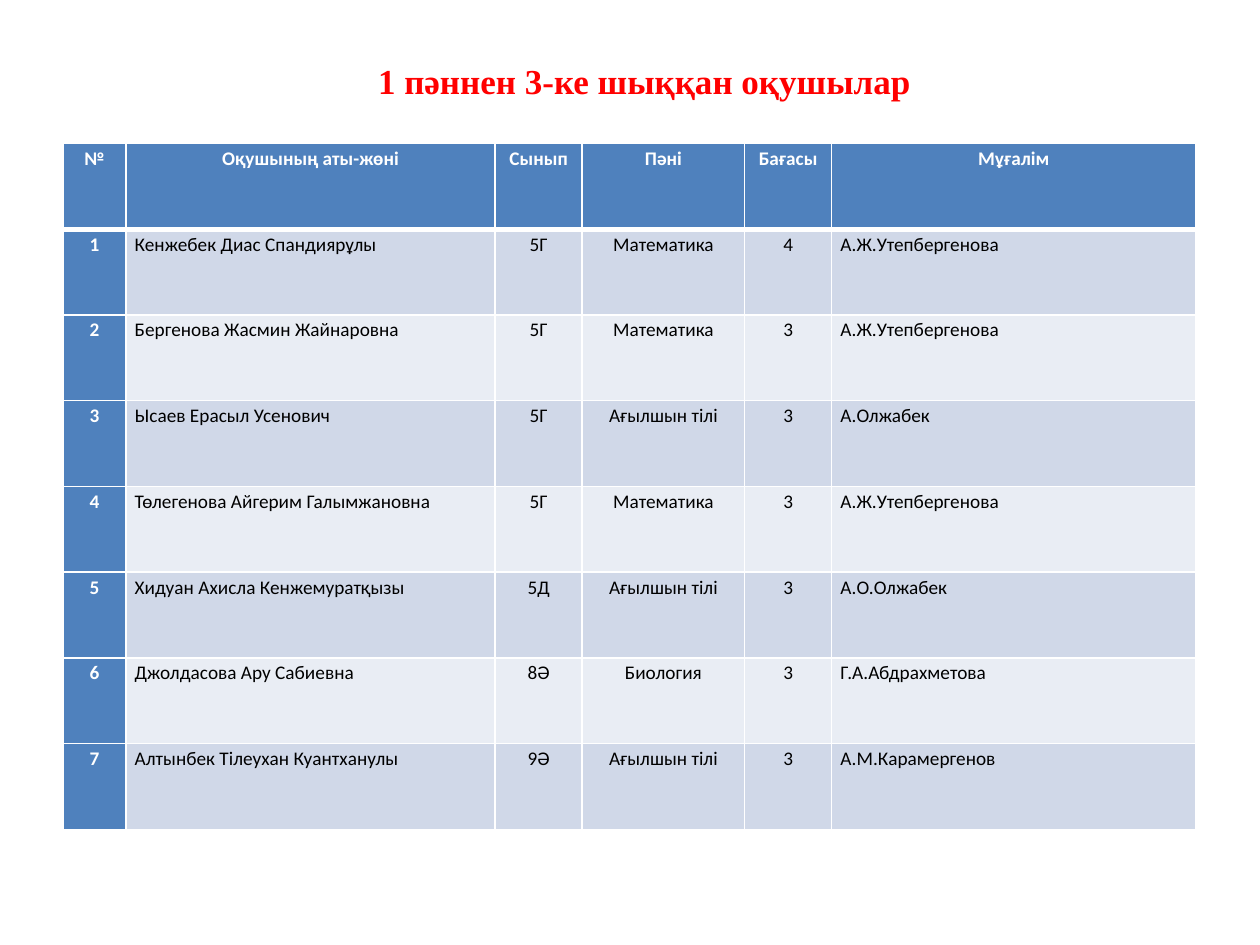
from lxml.etree import SubElement
from pptx import Presentation
from pptx.dml.color import RGBColor
from pptx.enum.shapes import MSO_SHAPE as Shape
from pptx.enum.text import MSO_ANCHOR as Anchor, PP_ALIGN as Align
from pptx.oxml.ns import qn
from pptx.util import Pt

WHITE = RGBColor(0xFF, 0xFF, 0xFF)
BLACK = RGBColor(0, 0, 0)
RED = RGBColor(0xFF, 0, 0)
BLUE = RGBColor(0x4F, 0x81, 0xBD)
BANDS = RGBColor(0xD0, 0xD8, 0xE8), RGBColor(0xE9, 0xED, 0xF4)

HEADER = ["№", "Оқушының аты-жөні", "Сынып", "Пәні", "Бағасы", "Мұғалім"]
PUPILS = [
    ["Кенжебек Диас Спандиярұлы", "5Г", "Математика", "4", "А.Ж.Утепбергенова"],
    ["Бергенова Жасмин Жайнаровна", "5Г", "Математика", "3", "А.Ж.Утепбергенова"],
    ["Ысаев Ерасыл Усенович", "5Г", "Ағылшын тілі", "3", "А.Олжабек"],
    ["Төлегенова Айгерим Галымжановна", "5Г", "Математика", "3", "А.Ж.Утепбергенова"],
    ["Хидуан Ахисла Кенжемуратқызы", "5Д", "Ағылшын тілі", "3", "А.О.Олжабек"],
    ["Джолдасова Ару Сабиевна", "8Ә", "Биология", "3", "Г.А.Абдрахметова"],
    ["Алтынбек Тілеухан Куантханулы", "9Ә", "Ағылшын тілі", "3", "А.М.Карамергенов"],
]
COL_WIDTHS = [36, 211, 49.7, 92.9, 49.7, 208.1]
ROW_HEIGHT = 49
LEFT_COLS = (1, 5)  # pupil and teacher names


def put_text(tf, text, *, font="Calibri", size=11, color=BLACK, bold=False,
             align=Align.CENTER, spacing=None):
    p = tf.paragraphs[0]
    p.alignment = align
    p.line_spacing = spacing
    r = p.add_run()
    r.text = text
    r.font.name, r.font.size, r.font.bold = font, Pt(size), bold
    r.font.color.rgb = color


class Deck:
    def __init__(self, width, height):
        self.prs = Presentation()
        self.prs.slide_width, self.prs.slide_height = Pt(width), Pt(height)
        self.s = self.prs.slides.add_slide(self.prs.slide_layouts[6])

    def title(self, text, x, y, w, h):
        sp = self.s.shapes.add_shape(Shape.RECTANGLE, Pt(x), Pt(y), Pt(w), Pt(h))
        sp.shadow.inherit = False
        sp.fill.solid()
        sp.fill.fore_color.rgb = WHITE
        sp.line.fill.background()
        tf = sp.text_frame
        tf.word_wrap = True
        tf.vertical_anchor = Anchor.MIDDLE
        tf.margin_top, tf.margin_bottom = Pt(14), Pt(3.6)
        put_text(tf, text, font="Times New Roman", size=20, color=RED, bold=True)

    def borders(self, cell, top=1, bottom=1):
        tc_pr = cell._tc.get_or_add_tcPr()
        widths = {"a:lnL": 1, "a:lnR": 1, "a:lnT": top, "a:lnB": bottom}
        for i, (tag, width) in enumerate(widths.items()):
            ln = SubElement(tc_pr, qn(tag), w=str(Pt(width)))
            fill = SubElement(ln, qn("a:solidFill"))
            SubElement(fill, qn("a:srgbClr"), val=str(WHITE))
            tc_pr.insert(i, ln)  # borders come before the fill

    def cell(self, cell, text, row, col):
        head = row == 0 or col == 0
        cell.margin_left = cell.margin_right = Pt(5)
        cell.margin_top = cell.margin_bottom = 0
        cell.fill.solid()
        cell.fill.fore_color.rgb = BLUE if head else BANDS[(row - 1) % 2]
        self.borders(cell, 3 if row == 1 else 1, 3 if row == 0 else 1)
        left = row > 0 and col in LEFT_COLS
        put_text(cell.text_frame, text, color=WHITE if head else BLACK,
                 bold=head, align=Align.LEFT if left else Align.CENTER, spacing=1.15)

    def table(self, rows, widths, row_height, x, y):
        table = self.s.shapes.add_table(
            len(rows), len(widths), Pt(x), Pt(y),
            Pt(sum(widths)), Pt(row_height * len(rows))).table
        for column, width in zip(table.columns, widths):
            column.width = Pt(width)
        for i, row in enumerate(rows):
            table.rows[i].height = Pt(row_height)
            for j, text in enumerate(row):
                self.cell(table.cell(i, j), text, i, j)


def main():
    deck = Deck(720, 540)
    # Title
    deck.title("1 пәннен 3-ке шыққан оқушылар", 106.5, 0, 523.5, 82)
    # Numbered table of pupils
    rows = [HEADER] + [[str(n), *pupil] for n, pupil in enumerate(PUPILS, 1)]
    deck.table(rows, COL_WIDTHS, ROW_HEIGHT, 36, 82)
    deck.prs.save("out.pptx")


if __name__ == "__main__":
    main()
